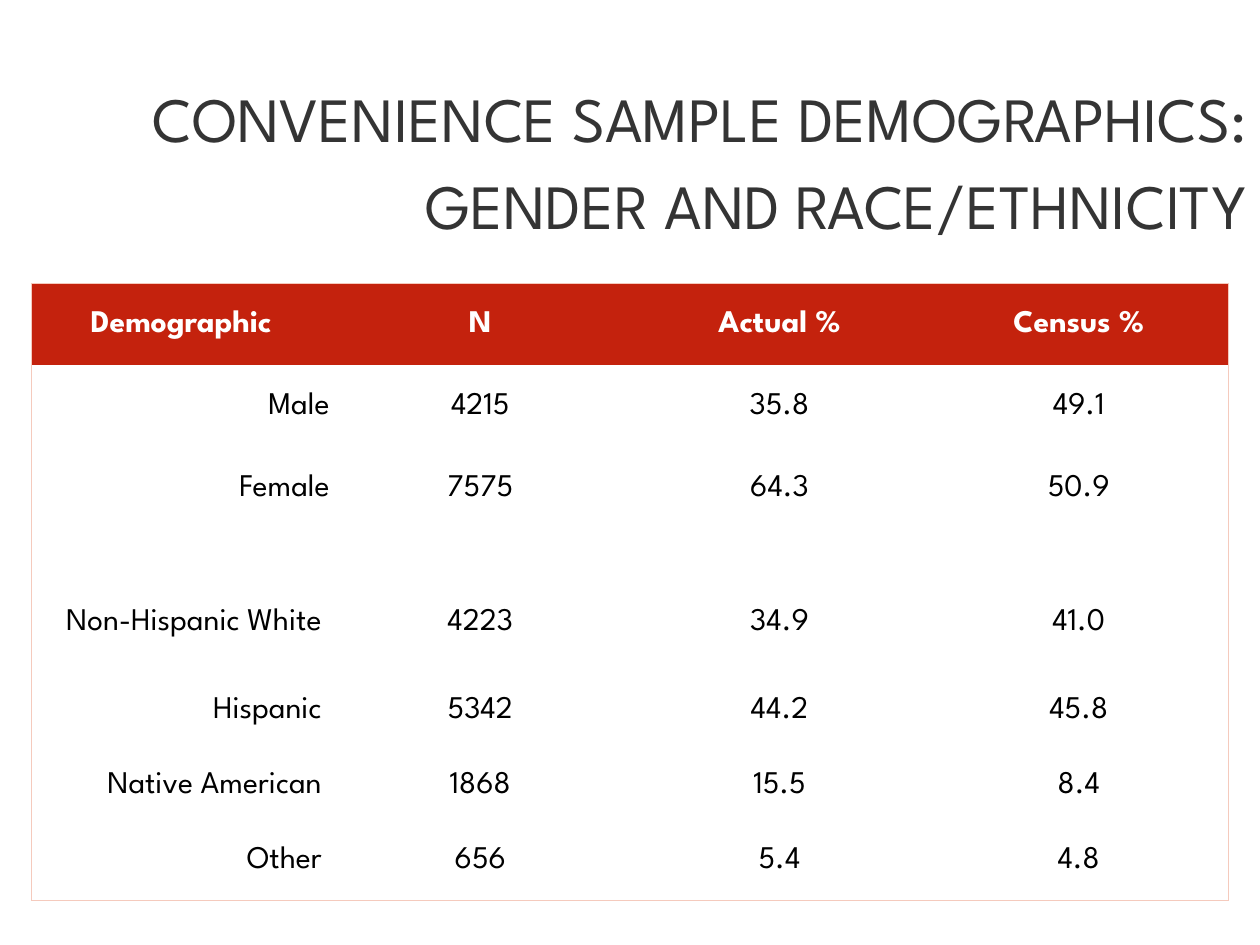
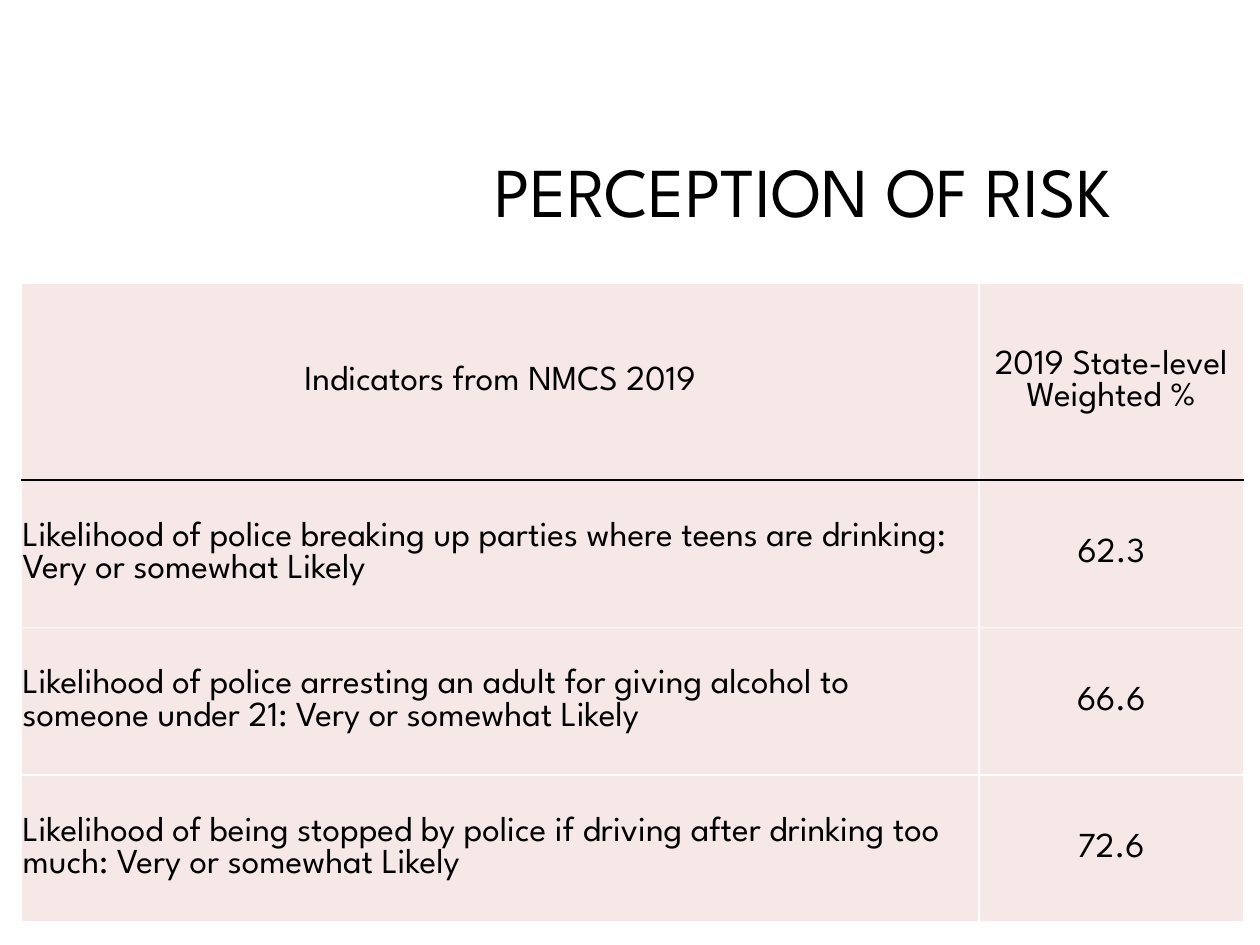
from dataclasses import dataclass

from lxml import etree
from pptx import Presentation
from pptx.dml.color import RGBColor
from pptx.enum.text import MSO_ANCHOR, MSO_AUTO_SIZE, PP_ALIGN
from pptx.oxml.ns import qn
from pptx.util import Inches, Pt

LEFT, MID, RIGHT = PP_ALIGN.LEFT, PP_ALIGN.CENTER, PP_ALIGN.RIGHT
MIDDLE, NO_FIT = MSO_ANCHOR.MIDDLE, MSO_AUTO_SIZE.NONE


@dataclass(frozen=True)
class Theme:
    font: str = "League Spartan"
    black: str = "000000"
    white: str = "FFFFFF"
    gray: str = "343434"
    red: str = "C4220D"
    peach: str = "F5CABD"
    pink: str = "F5E8E7"
    head: int = 36
    big: int = 40
    small: int = 18
    body: int = 20
    lead: float = 1.15
    inset: float = 0.01


class Deck:
    def __init__(self, theme):
        self.theme = theme
        self.prs = Presentation()
        self.prs.slide_width, self.prs.slide_height = Inches(10), Inches(7.5)
        self.slide = None

    def style(self, item, values):
        for name, value in values.items():
            setattr(item, name, value)

    def label(self, para, text, size, color, align, bold=False):
        para.text = text
        para.alignment = align
        self.style(para.font, {"name": self.theme.font, "size": Pt(size), "bold": bold})
        para.font.color.rgb = RGBColor.from_string(color)

    def title(self, text, box, size, color):
        """Start a slide and set its title."""
        self.slide = self.prs.slides.add_slide(self.prs.slide_layouts[5])
        shape = self.slide.shapes.title
        names = ("left", "top", "width", "height")
        self.style(shape, dict(zip(names, map(Inches, box))))
        frame = shape.text_frame
        self.style(frame, {"word_wrap": True, "auto_size": NO_FIT, "vertical_anchor": MIDDLE})
        para = frame.paragraphs[0]
        self.label(para, text, size, color, RIGHT)
        para.line_spacing = self.theme.lead

    def edges(self, cell, lines):
        """Draw the sides of a cell; a side with no colour stays clear."""
        props = cell._tc.get_or_add_tcPr()
        for spot, side in enumerate("LRTB"):
            color, width = lines.get(side, (None, 0))
            line = etree.Element(qn(f"a:ln{side}"), w=str(Pt(width)))
            if color:
                fill = etree.SubElement(line, qn("a:solidFill"))
                etree.SubElement(fill, qn("a:srgbClr"), val=color)
            else:
                etree.SubElement(line, qn("a:noFill"))
            props.insert(spot, line)

    def table(self, rows, spot, cols, heights, look):
        """Add a table; look(row, col) gives fill, text format and edges."""
        left, top = map(Inches, spot)
        frame = self.slide.shapes.add_table(
            len(rows), len(cols), left, top, Inches(sum(cols)), Inches(sum(heights)))
        grid = frame.table
        self.style(grid, {"first_row": False, "horz_banding": False})
        for col, width in zip(grid.columns, cols):
            col.width = Inches(width)
        gap = Inches(self.theme.inset)
        pads = {"margin_left": gap, "margin_right": gap, "margin_top": gap,
                "margin_bottom": 0, "vertical_anchor": MIDDLE}
        for r, (row, height) in enumerate(zip(rows, heights)):
            grid.rows[r].height = Inches(height)
            for c, text in enumerate(row):
                cell = grid.cell(r, c)
                fill, form, lines = look(r, c)
                self.style(cell, pads)
                cell.fill.solid()
                cell.fill.fore_color.rgb = RGBColor.from_string(fill)
                self.label(cell.text_frame.paragraphs[0], text, **form)
                self.edges(cell, lines)


def sample(deck):
    """Demographics: red header, frame around the whole table."""
    t = deck.theme
    rows = [
        ("Demographic", "N", "Actual %", "Census %"),
        ("Male", "4215", "35.8", "49.1"),
        ("Female", "7575", "64.3", "50.9"),
        ("", "", "", ""),
        ("Non-Hispanic White ", "4223", "34.9", "41.0"),
        ("Hispanic ", "5342", "44.2", "45.8"),
        ("Native American ", "1868", "15.5", "8.4"),
        ("Other ", "656", "5.4", "4.8"),
    ]
    cols = [9.5 / 4] * 4

    def look(r, c):
        top = r == 0
        rim = {"L": c == 0, "R": c == len(cols) - 1, "T": top, "B": r == len(rows) - 1}
        lines = {side: (t.peach, 0.75) for side, on in rim.items() if on}
        form = {"size": t.small, "color": t.white if top else t.black, "bold": top,
                "align": RIGHT if c == 0 and not top else MID}
        return t.red if top else t.white, form, lines

    deck.title("CONVENIENCE SAMPLE DEMOGRAPHICS: GENDER AND RACE/ETHNICITY",
               (0.65, 0.75, 9.35, 0.96), t.head, t.gray)
    deck.table(rows, (0.25, 2.25), cols,
               [0.65, 0.65, 0.65, 0.37, 0.74, 0.65, 0.54, 0.65], look)


def risk(deck):
    """Perception of risk: pink cells, white grid, black rule under the header."""
    t = deck.theme
    rows = [
        ("Indicators from NMCS 2019", "2019 State-level Weighted %"),
        ("Likelihood of police breaking up parties where teens are drinking: "
         "Very or somewhat Likely", "62.3"),
        ("Likelihood of police arresting an adult for giving alcohol to "
         "someone under 21: Very or somewhat Likely", "66.6"),
        ("Likelihood of being stopped by police if driving after drinking too "
         "much: Very or somewhat Likely", "72.6"),
    ]

    def look(r, c):
        lines = {side: (t.white, 1) for side in "LRTB"}
        if r < 2:
            lines["B" if r == 0 else "T"] = (t.black, 1)
        form = {"size": t.body, "color": t.black, "align": LEFT if r and c == 0 else MID}
        return t.pink, form, lines

    deck.title("PERCEPTION OF RISK", (1.42, 0.75, 7.5, 1.41), t.big, t.black)
    deck.table(rows, (0.17, 2.25), [7.6, 2.1], [1.56] + [1.17] * 3, look)


def main():
    deck = Deck(Theme())
    sample(deck)
    risk(deck)
    deck.prs.save("out.pptx")


if __name__ == "__main__":
    main()
